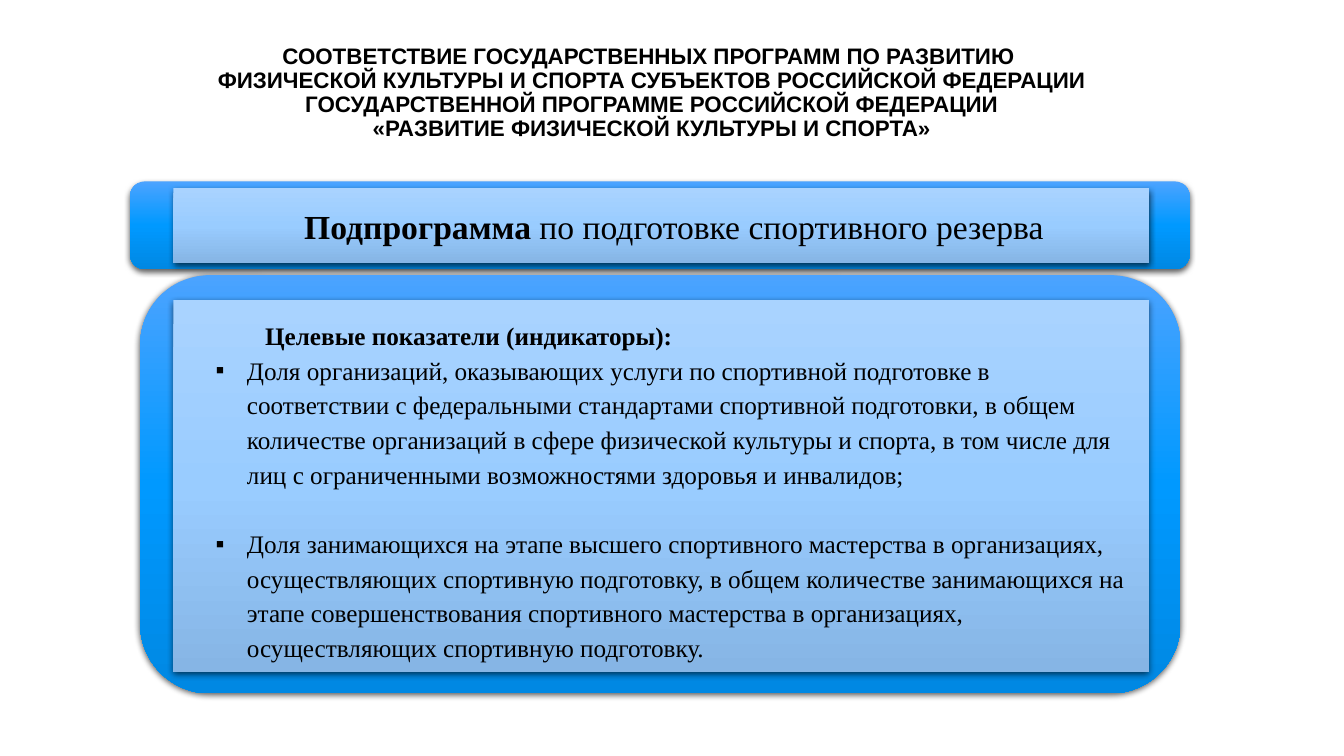
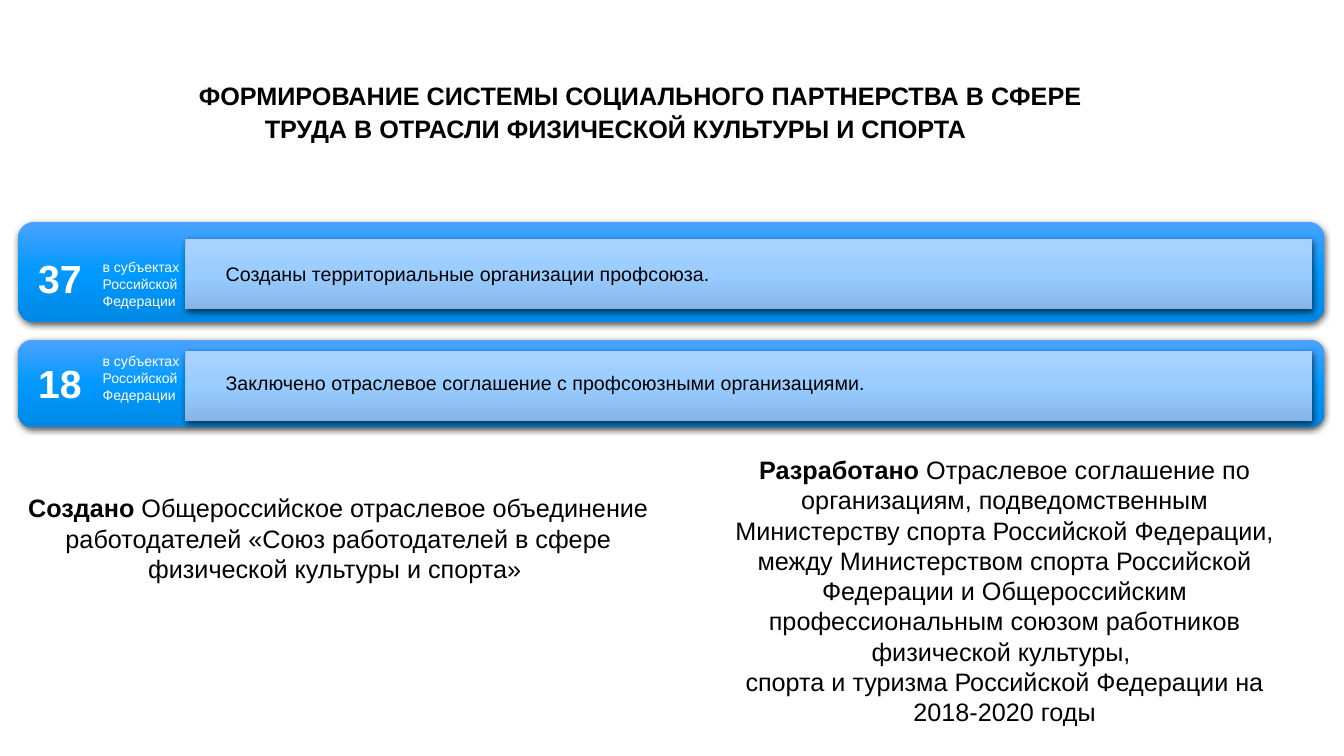
"""Build two slides on state sport programmes and social partnership."""
from pptx import Presentation
from pptx import oxml
from pptx import util as u
from pptx.dml.color import RGBColor
from pptx.enum import shapes, text
from pptx.oxml import ns

BLACK = RGBColor(0, 0, 0)
WHITE = RGBColor(255, 255, 255)
BAND = [RGBColor(0x4B, 0xA3, 0xFF), RGBColor(0x00, 0x99, 0xFF), RGBColor(0x00, 0x88, 0xE3)]
PLATE = [RGBColor(0xA9, 0xD3, 0xFF), RGBColor(0x99, 0xCC, 0xFF), RGBColor(0x86, 0xB5, 0xE5)]
SANS, SERIF = "Arial", "Times New Roman"
CENTER, LEFT = text.PP_ALIGN.CENTER, text.PP_ALIGN.LEFT
ROUNDED = shapes.MSO_SHAPE.ROUNDED_RECTANGLE
SQUARE = shapes.MSO_SHAPE.RECTANGLE
XMLNS = ns.nsdecls("a")

deck = Presentation()
deck.slide_width, deck.slide_height = u.Emu(12192000), u.Emu(6858000)
COL, ROW = deck.slide_width // 100, deck.slide_height // 100


def add_panel(page, kind, colors, x, y, w, h):
    box = page.shapes.add_shape(kind, int(x * COL), int(y * ROW), int(w * COL), int(h * ROW))
    box.line.fill.background()
    stops = "".join(
        f'<a:gs pos="{50000 * place}"><a:srgbClr val="{color}"/></a:gs>'
        for place, color in enumerate(colors))
    gradient = oxml.parse_xml(
        f'<a:gradFill {XMLNS} rotWithShape="1"><a:gsLst>{stops}</a:gsLst>'
        '<a:lin ang="5400000" scaled="0"/></a:gradFill>')
    shadow = oxml.parse_xml(
        f'<a:effectLst {XMLNS}><a:outerShdw blurRad="57150" dist="19050" dir="5400000" '
        'algn="ctr" rotWithShape="0"><a:srgbClr val="000000"><a:alpha val="63000"/>'
        '</a:srgbClr></a:outerShdw></a:effectLst>')
    properties = box._element.spPr
    properties.insert(2, gradient)
    properties.append(shadow)


def write(box, area, paragraphs, size, font=SANS, color=BLACK, align=LEFT, spacing=1.0,
          wrap=True, anchor=text.MSO_ANCHOR.TOP):
    x, y, w, h = area
    box.left, box.top = int(x * COL), int(y * ROW)
    box.width, box.height = int(w * COL), int(h * ROW)
    frame = box.text_frame
    frame.word_wrap = wrap
    frame.auto_size = text.MSO_AUTO_SIZE.NONE
    frame.vertical_anchor = anchor
    for index, runs in enumerate(paragraphs):
        para = frame.paragraphs[0] if index == 0 else frame.add_paragraph()
        para.alignment = align
        para.line_spacing = spacing
        para.space_before = para.space_after = u.Pt(0)
        for words, bold in runs:
            span = para.add_run()
            span.text = words
            span.font.size = u.Pt(size)
            span.font.name = font
            span.font.bold = bold
            span.font.color.rgb = color
    return frame


page = deck.slides.add_slide(deck.slide_layouts[1])
for kind, colors, area in [
    (ROUNDED, BAND, (9.68, 24, 78.83, 11.6)),
    (SQUARE, PLATE, (12.9, 24.93, 72.6, 9.87)),
    (ROUNDED, BAND, (10.43, 36.4, 77.4, 55.33)),
    (SQUARE, PLATE, (12.9, 39.73, 72.6, 49.2)),
]:
    add_panel(page, kind, colors, *area)

write(page.shapes.title, (6.68, 0.4, 83.63, 23.87), [
    [("СООТВЕТСТВИЕ ГОСУДАРСТВЕННЫХ ПРОГРАММ ПО РАЗВИТИЮ ", True)],
    [("ФИЗИЧЕСКОЙ КУЛЬТУРЫ И СПОРТА СУБЪЕКТОВ РОССИЙСКОЙ ФЕДЕРАЦИИ "
      "ГОСУДАРСТВЕННОЙ ПРОГРАММЕ РОССИЙСКОЙ ФЕДЕРАЦИИ", True)],
    [("«РАЗВИТИЕ ФИЗИЧЕСКОЙ КУЛЬТУРЫ И СПОРТА»", True)],
], 16, align=CENTER, spacing=0.9, anchor=text.MSO_ANCHOR.MIDDLE)

write(page.shapes.add_textbox(0, 0, 0, 0), (21.9, 26.53, 60.45, 6.8), [
    [("Подпрограмма", True), (" по подготовке спортивного резерва", False)],
], 24, SERIF)

body = page.placeholders[1]
page.shapes._spTree.append(body._element)
indicators = write(body, (15.3, 41.07, 69.4, 47.73), [
    [("Целевые показатели (индикаторы):", True)],
    [("Доля организаций, оказывающих услуги по спортивной подготовке в соответствии "
      "с федеральными стандартами спортивной подготовки, в общем количестве организаций "
      "в сфере физической культуры и спорта, в том числе для лиц с ограниченными "
      "возможностями здоровья и инвалидов;", False)],
    [("Доля занимающихся на этапе высшего спортивного мастерства в организациях, "
      "осуществляющих спортивную подготовку, в общем количестве занимающихся на этапе "
      "совершенствования спортивного мастерства в организациях, осуществляющих "
      "спортивную подготовку.", False)],
], 18, SERIF, spacing=1.15)
for index, para in enumerate(indicators.paragraphs):
    margin, indent = (0.31, -0.31) if index else (0, 0.49)
    bullet = '<a:buChar {} char="▪"/>' if index else "<a:buNone {}/>"
    settings = para._p.get_or_add_pPr()
    settings.set("marL", str(u.Inches(margin)))
    settings.set("indent", str(u.Inches(indent)))
    settings.append(oxml.parse_xml(bullet.format(XMLNS)))
indicators.paragraphs[2].space_before = u.Pt(24.5)

page = deck.slides.add_slide(deck.slide_layouts[5])
heading = write(page.shapes.title, (9.3, 9.73, 73, 9.73), [
    [("ФОРМИРОВАНИЕ СИСТЕМЫ СОЦИАЛЬНОГО ПАРТНЕРСТВА В СФЕРЕ ТРУДА "
      "В ОТРАСЛИ ФИЗИЧЕСКОЙ КУЛЬТУРЫ И СПОРТА", True)],
], 18, align=CENTER, spacing=1.07)
heading.paragraphs[0]._p.get_or_add_pPr().set("indent", str(u.Inches(0.49)))

REGIONS = ["в субъектах", "Российской", "Федерации"]
for number, fact, band_y, band_h, plate_y, number_y, label_y, fact_y in [
    ("37", "Созданы территориальные организации профсоюза.",
     29.33, 13.33, 31.6, 32.93, 33.6, 34),
    ("18", "Заключено отраслевое соглашение с профсоюзными организациями.",
     44.93, 11.6, 46.4, 46.93, 46, 48.4),
]:
    add_panel(page, ROUNDED, BAND, 1.35, band_y, 97.2, band_h)
    add_panel(page, SQUARE, PLATE, 13.8, plate_y, 83.85, 9.33)
    for area, lines, size, color, bold in [
        ((2.1, number_y, 4.8, 7.6), [number], 28, WHITE, True),
        ((6.9, label_y, 7.35, 8.13), REGIONS, 10, WHITE, False),
        ((16.05, fact_y, 70, 4.53), [fact], 14, BLACK, False),
    ]:
        write(page.shapes.add_textbox(0, 0, 0, 0), area,
              [[(line, bold)] for line in lines], size, color=color, wrap=size == 14)

for area, paragraphs in [
    ((0.15, 64.53, 50.03, 13.47), [
        [("Создано", True),
         (" Общероссийское отраслевое объединение работодателей "
          "«Союз работодателей в сфере физической культуры и спорта» ", False)]]),
    ((52.73, 59.47, 44.03, 37.73), [
        [("Разработано", True),
         (" Отраслевое соглашение по организациям, подведомственным Министерству спорта "
          "Российской Федерации, между Министерством спорта Российской Федерации и "
          "Общероссийским профессиональным союзом работников физической культуры, ", False)],
        [("спорта и туризма Российской Федерации на 2018-2020 годы", False)]]),
]:
    write(page.shapes.add_textbox(0, 0, 0, 0), area, paragraphs, 18, align=CENTER)

deck.save("out.pptx")
